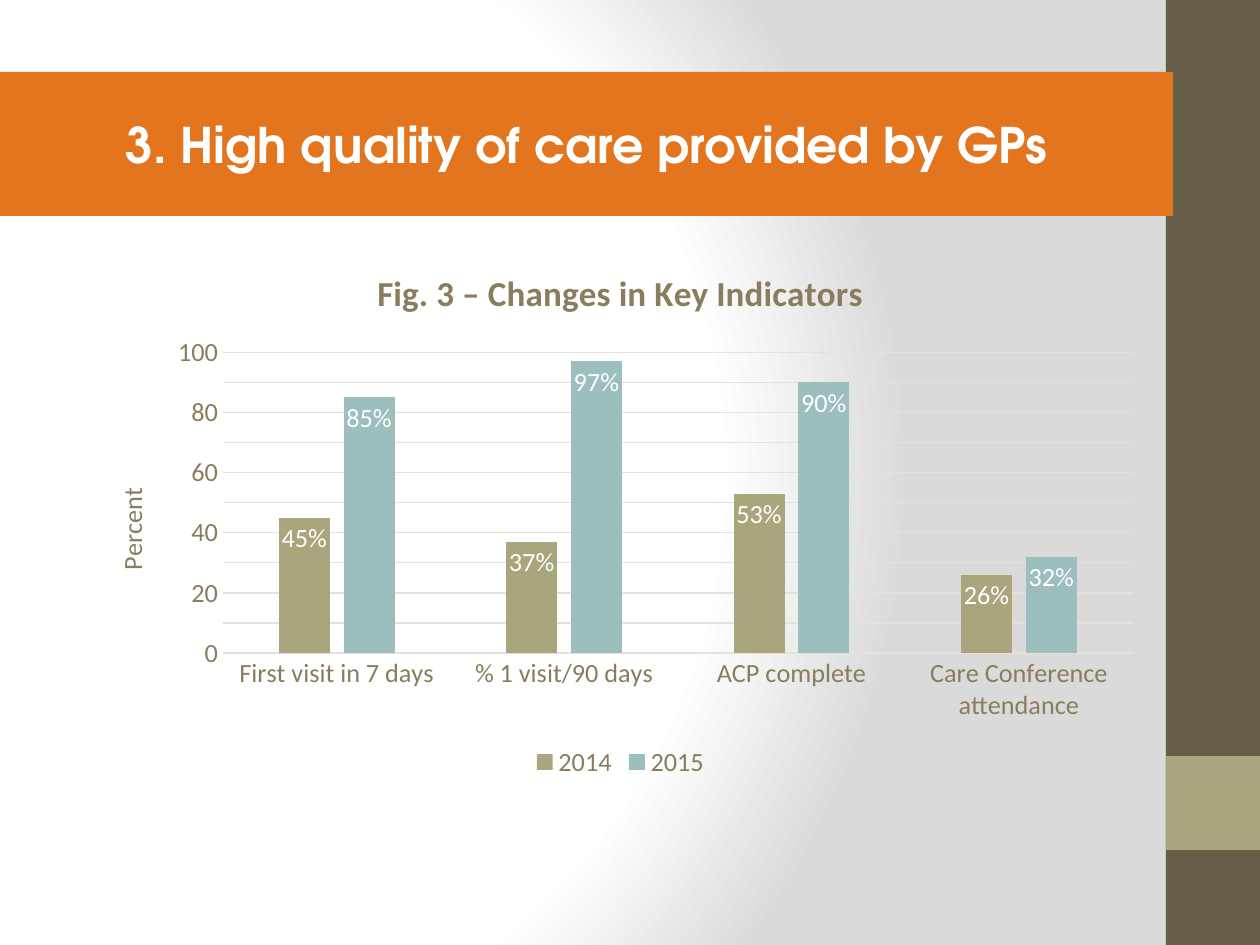
"""Build a slide with a title band and a column chart of key care indicators."""
import pptx
import pptx.chart.data
import pptx.dml.color
import pptx.enum.chart
import pptx.enum.shapes
import pptx.enum.text
import pptx.oxml
import pptx.oxml.ns
import pptx.util

TITLE = "3. High quality of care provided by GPs"
CHART_TITLE = "Fig. 3 – Changes in Key Indicators"
AXIS_TITLE = "Percent"
CATEGORIES = ["First visit in 7 days", "% 1 visit/90 days", "ACP complete", "Care Conference attendance"]
SERIES = [
    {"name": "2014", "values": [45, 37, 53, 26], "color": "olive"},
    {"name": "2015", "values": [85, 97, 90, 32], "color": "teal"},
]

THEME = {
    "colors": {
        "white": "FFFFFF", "gray": "DADADA", "brown": "675E47", "olive": "A9A57C",
        "teal": "9CBEBD", "orange": "E2751D", "text": "897D5D", "grid": "E5E2D9",
    },
    "sizes": {"title": 28, "chart_title": 20, "chart": 15},
    "fonts": {"title": "TeX Gyre Adventor", "chart": "Calibri"},
}
SLIDE_SIZE = (1260, 945)
SIDEBAR_LEFT = 1166
SIDEBAR_WIDTH = SLIDE_SIZE[0] - SIDEBAR_LEFT
PANELS = [
    ((SIDEBAR_LEFT, 0, SIDEBAR_WIDTH, SLIDE_SIZE[1]), "brown"),
    ((SIDEBAR_LEFT, 756, SIDEBAR_WIDTH, SIDEBAR_WIDTH), "olive"),
]
TITLE_BOX = (0, 72, 1173, 144)
CHART_BOX = (87, 244, 1067, 539)
GRADIENT_STOPS = [(0, "white"), (75, "white"), (100, "gray")]
GRADIENT_FOCUS = {"l": 20, "t": 50, "r": 100, "b": 50}


def px(length):
    return pptx.util.Emu(round(length * 914400 / 126))


def color(name):
    return pptx.dml.color.RGBColor.from_string(THEME["colors"][name])


def style_font(font, size="chart", fill="text", face="chart", bold=False):
    font.size = pptx.util.Pt(THEME["sizes"][size])
    font.name = THEME["fonts"][face]
    font.bold = bold
    font.color.rgb = color(fill)


def write_text(text_frame, text, align=None, **font_format):
    paragraph = text_frame.paragraphs[0]
    paragraph.alignment = align
    run = paragraph.add_run()
    run.text = text
    style_font(run.font, **font_format)


def style_line(line):
    line.color.rgb = color("grid")
    line.width = pptx.util.Pt(0.75)


def add_panel(slide, box, fill):
    shape = slide.shapes.add_shape(pptx.enum.shapes.MSO_SHAPE.RECTANGLE, *map(px, box))
    shape.shadow.inherit = False
    shape.fill.solid()
    shape.fill.fore_color.rgb = color(fill)
    shape.line.fill.background()
    return shape


def set_background(slide):
    slide.background.fill.gradient()
    gradient = slide.element.find(".//" + pptx.oxml.ns.qn("a:gradFill"))
    stops = "".join(
        f'<a:gs pos="{position * 1000}"><a:srgbClr val="{THEME["colors"][name]}"/></a:gs>'
        for position, name in GRADIENT_STOPS
    )
    focus = " ".join(f'{side}="{percent * 1000}"' for side, percent in GRADIENT_FOCUS.items())
    radial = pptx.oxml.parse_xml(
        f'<a:gradFill {pptx.oxml.ns.nsdecls("a")} rotWithShape="1"><a:gsLst>{stops}</a:gsLst>'
        f'<a:path path="circle"><a:fillToRect {focus}/></a:path></a:gradFill>'
    )
    gradient.getparent().replace(gradient, radial)


def style_axes(chart):
    category_axis, value_axis = chart.category_axis, chart.value_axis
    for axis in (category_axis, value_axis):
        axis.major_tick_mark = pptx.enum.chart.XL_TICK_MARK.NONE
        axis.minor_tick_mark = pptx.enum.chart.XL_TICK_MARK.NONE
        style_font(axis.tick_labels.font)
    style_line(category_axis.format.line)
    value_axis.format.line.fill.background()
    value_axis.minimum_scale = 0
    value_axis.maximum_scale = 100
    value_axis.major_unit = 10
    value_axis.has_major_gridlines = True
    style_line(value_axis.major_gridlines.format.line)
    title_frame = value_axis.axis_title.text_frame
    write_text(title_frame, AXIS_TITLE)
    title_frame._txBody.find(pptx.oxml.ns.qn("a:bodyPr")).set("rot", "-5400000")


def add_indicator_chart(slide):
    data = pptx.chart.data.CategoryChartData()
    data.categories = CATEGORIES
    for item in SERIES:
        data.add_series(item["name"], item["values"])
    chart = slide.shapes.add_chart(
        pptx.enum.chart.XL_CHART_TYPE.COLUMN_CLUSTERED, *map(px, CHART_BOX), data
    ).chart
    style_font(chart.font)
    chart.has_title = True
    write_text(chart.chart_title.text_frame, CHART_TITLE, size="chart_title", bold=True)
    chart.chart_title.include_in_layout = False
    chart.has_legend = True
    chart.legend.position = pptx.enum.chart.XL_LEGEND_POSITION.BOTTOM
    chart.legend.include_in_layout = False
    style_font(chart.legend.font)
    style_axes(chart)

    plot = chart.plots[0]
    plot.vary_by_categories = False
    plot.gap_width = 219
    plot.overlap = -27
    for series, item in zip(plot.series, SERIES):
        series.format.fill.solid()
        series.format.fill.fore_color.rgb = color(item["color"])
        labels = series.data_labels
        labels.show_value = True
        labels.number_format = '0"%"'
        labels.number_format_is_linked = False
        labels.position = pptx.enum.chart.XL_LABEL_POSITION.INSIDE_END
        style_font(labels.font, fill="white")


def main():
    presentation = pptx.Presentation()
    presentation.slide_width, presentation.slide_height = map(px, SLIDE_SIZE)
    slide = presentation.slides.add_slide(presentation.slide_layouts[6])
    set_background(slide)
    for box, fill in PANELS:
        add_panel(slide, box, fill)
    title = add_panel(slide, TITLE_BOX, "orange")
    title.text_frame.word_wrap = True
    title.text_frame.vertical_anchor = pptx.enum.text.MSO_ANCHOR.MIDDLE
    write_text(title.text_frame, TITLE, align=pptx.enum.text.PP_ALIGN.CENTER,
               size="title", fill="white", face="title", bold=True)
    add_indicator_chart(slide)
    presentation.save("out.pptx")


if __name__ == "__main__":
    main()
